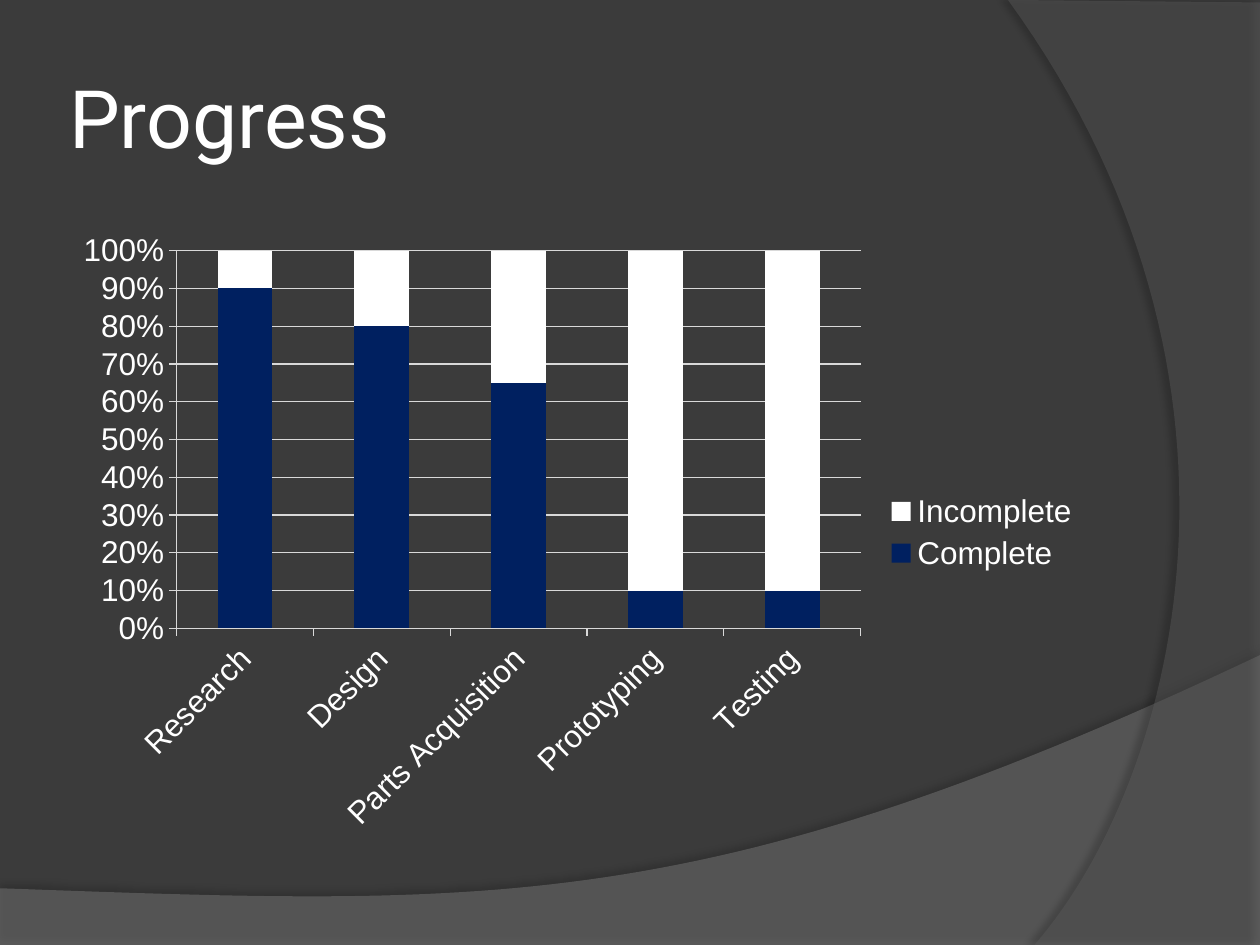
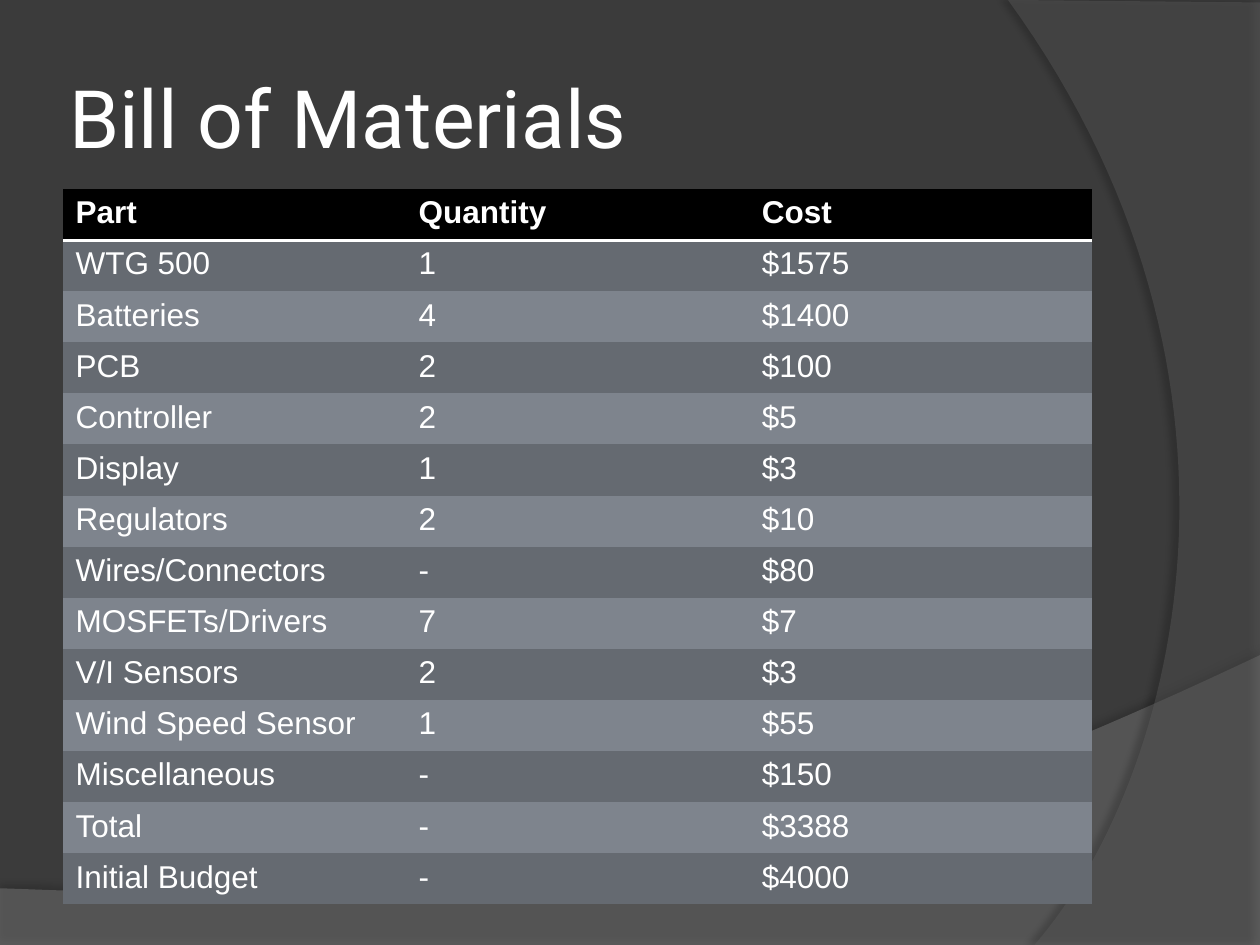
from lxml.etree import SubElement as Sub
from pptx import Presentation
from pptx.chart.data import CategoryChartData as Data
from pptx.dml.color import RGBColor as Rgb
from pptx.enum.chart import XL_CHART_TYPE as Kind, XL_LEGEND_POSITION as Side, XL_TICK_MARK as Tick
from pptx.enum.text import MSO_ANCHOR as Anchor
from pptx.oxml import parse_xml
from pptx.oxml.ns import nsdecls, qn
from pptx.util import Inches, Pt

HUES = {"back": "3B3B3B", "wave": "7F7F7F", "arc": "5E5E5E", "text": "FFFFFF",
        "done": "002060", "grid": "D9D9D9", "head": "000000",
        "odd": "656A71", "even": "7E848D"}
TITLE, BODY = "Roboto", "Arial"
PLAIN = "{2D5ABB26-0587-4C30-8999-92F81FD0307C}"
WAVE = dict(box=(0, 5.2, 10, 2.3), hue="wave", alpha=45,
            corners=[(0, 1.85), (0, 2.3), (10, 2.3), (10, 0)],
            curve=[(5.59, 2.09), (3.91, 1.99), (0, 1.85)], shade=(35, 3.5, 270))
ARC = dict(box=(8, 0, 2, 7.5), hue="arc", alpha=40,
           corners=[(2, 0.02), (2, 7.5), (0.21, 7.5)],
           curve=[(1.35, 6.19), (2.18, 3), (0, 0)], shade=(45, 4, 180))
STAGES = [("Research", 0.9), ("Design", 0.8), ("Parts Acquisition", 0.65),
          ("Prototyping", 0.1), ("Testing", 0.1)]
PARTS = [("Part", "Quantity", "Cost"), ("WTG 500", "1", "$1575"),
         ("Batteries", "4", "$1400"), ("PCB", "2", "$100"),
         ("Controller", "2", "$5"), ("Display", "1", "$3"),
         ("Regulators", "2", "$10"), ("Wires/Connectors", "-", "$80"),
         ("MOSFETs/Drivers", "7", "$7"), ("V/I Sensors", "2", "$3"),
         ("Wind Speed Sensor", "1", "$55"), ("Miscellaneous", "-", "$150"),
         ("Total", "-", "$3388"), ("Initial Budget", "-", "$4000")]


def paint(fill, hue):
    """Fill with one of the shared colours."""
    fill.solid()
    fill.fore_color.rgb = Rgb.from_string(HUES[hue])


def style(font, size, face=BODY, bold=False):
    """Set the shared text style on a font."""
    font.size, font.name, font.bold = Pt(size), face, bold
    font.color.rgb = Rgb.from_string(HUES["text"])


def bezier(ends, steps=60):
    """List the points of a cubic curve after its start."""
    points = []
    for step in range(1, steps + 1):
        t = step / steps
        parts = ((1 - t) ** 3, 3 * t * (1 - t) ** 2, 3 * t * t * (1 - t), t ** 3)
        points.append(tuple(sum(k * end[axis] for k, end in zip(parts, ends))
                            for axis in (0, 1)))
    return points


def add_band(slide, box, hue, alpha, corners, curve, shade):
    """Draw a clear curved band with a soft shadow inside its box."""
    left, top = box[:2]
    points = corners + bezier([corners[-1]] + curve)
    spots = [(Inches(left + x), Inches(top + y)) for x, y in points]
    build = slide.shapes.build_freeform(*spots[0], scale=1.0)
    build.add_line_segments(spots[1:], close=True)
    band = build.convert_to_shape()
    paint(band.fill, hue)
    band.line.fill.background()
    props = band._element.spPr
    Sub(props.find(qn("a:solidFill"))[0], qn("a:alpha"), val=str(alpha * 1000))
    dark, dist, angle = shade
    props.append(parse_xml(
        f'<a:effectLst {nsdecls("a")}><a:outerShdw blurRad="{Pt(4)}" dist="{Pt(dist)}" '
        f'dir="{angle * 60000}" algn="ctr" rotWithShape="0"><a:srgbClr val="000000">'
        f'<a:alpha val="{dark * 1000}"/></a:srgbClr></a:outerShdw></a:effectLst>'))


def add_title(slide, text, box):
    """Write the slide title, centred upright in its box."""
    frame = slide.shapes.add_textbox(*map(Inches, box)).text_frame
    frame.word_wrap, frame.vertical_anchor = True, Anchor.MIDDLE
    frame.margin_left = frame.margin_right = Inches(0.05)
    line = frame.paragraphs[0]
    line.text = text
    style(line.font, 46, TITLE)


def add_base(deck, title):
    """Start a slide with the shared ground, bands and title."""
    slide = deck.slides.add_slide(deck.slide_layouts[6])
    paint(slide.background.fill, "back")
    for band in (WAVE, ARC):
        add_band(slide, **band)
    add_title(slide, title, (0.5, 0.3, 8.17, 1.25))
    return slide


def add_stages(slide, box):
    """Chart how far each stage has come."""
    data = Data(number_format="0%")
    data.categories = [name for name, _ in STAGES]
    data.add_series("Complete", [done for _, done in STAGES])
    data.add_series("Incomplete", [round(1 - done, 2) for _, done in STAGES])
    chart = slide.shapes.add_chart(Kind.COLUMN_STACKED, *map(Inches, box), data).chart
    style(chart.font, 18)
    chart.has_title = False
    chart.has_legend = True
    chart.legend.position = Side.RIGHT
    chart.legend.include_in_layout = False
    plot = chart.plots[0]
    plot.gap_width, plot.overlap, plot.vary_by_categories = 150, 100, False
    for series, hue in zip(plot.series, ("done", "text")):
        paint(series.format.fill, hue)
    stage, share = chart.category_axis, chart.value_axis
    share.minimum_scale, share.maximum_scale, share.major_unit = 0, 1, 0.1
    share.has_major_gridlines = True
    share.tick_labels.number_format = "0%"
    share.tick_labels.number_format_is_linked = False
    for axis in (stage, share):
        axis.major_tick_mark = Tick.OUTSIDE
        style(axis.tick_labels.font, 18)
    for part in (stage, share, share.major_gridlines):
        paint(part.format.line.fill, "grid")
        part.format.line.width = Pt(0.75)
    stage._element.find(qn("c:txPr")).find(qn("a:bodyPr")).set("rot", "-2700000")


def add_rule(cell):
    """Draw a white rule under a cell."""
    cell._tc.get_or_add_tcPr().insert(0, parse_xml(
        f'<a:lnB {nsdecls("a")} w="{Pt(2)}"><a:solidFill>'
        f'<a:srgbClr val="{HUES["text"]}"/></a:solidFill></a:lnB>'))


def add_parts(slide, box):
    """Lay out the parts list as a banded table."""
    table = slide.shapes.add_table(len(PARTS), len(PARTS[0]), *map(Inches, box)).table
    table._tbl.tblPr.find(qn("a:tableStyleId")).text = PLAIN
    for row, texts in enumerate(PARTS):
        hue = "head" if row == 0 else "odd" if row % 2 else "even"
        for col, text in enumerate(texts):
            cell = table.cell(row, col)
            cell.text = text
            paint(cell.fill, hue)
            style(cell.text_frame.paragraphs[0].font, 18, bold=row == 0)
            if row == 0:
                add_rule(cell)


def main():
    """Build and save both slides."""
    deck = Presentation()
    deck.slide_width, deck.slide_height = Inches(10), Inches(7.5)
    add_stages(add_base(deck, "Progress"), (0.5, 1.75, 8.17, 4.95))
    add_parts(add_base(deck, "Bill of Materials"), (0.5, 1.5, 8.17, 5.68))
    deck.save("out.pptx")


if __name__ == "__main__":
    main()
